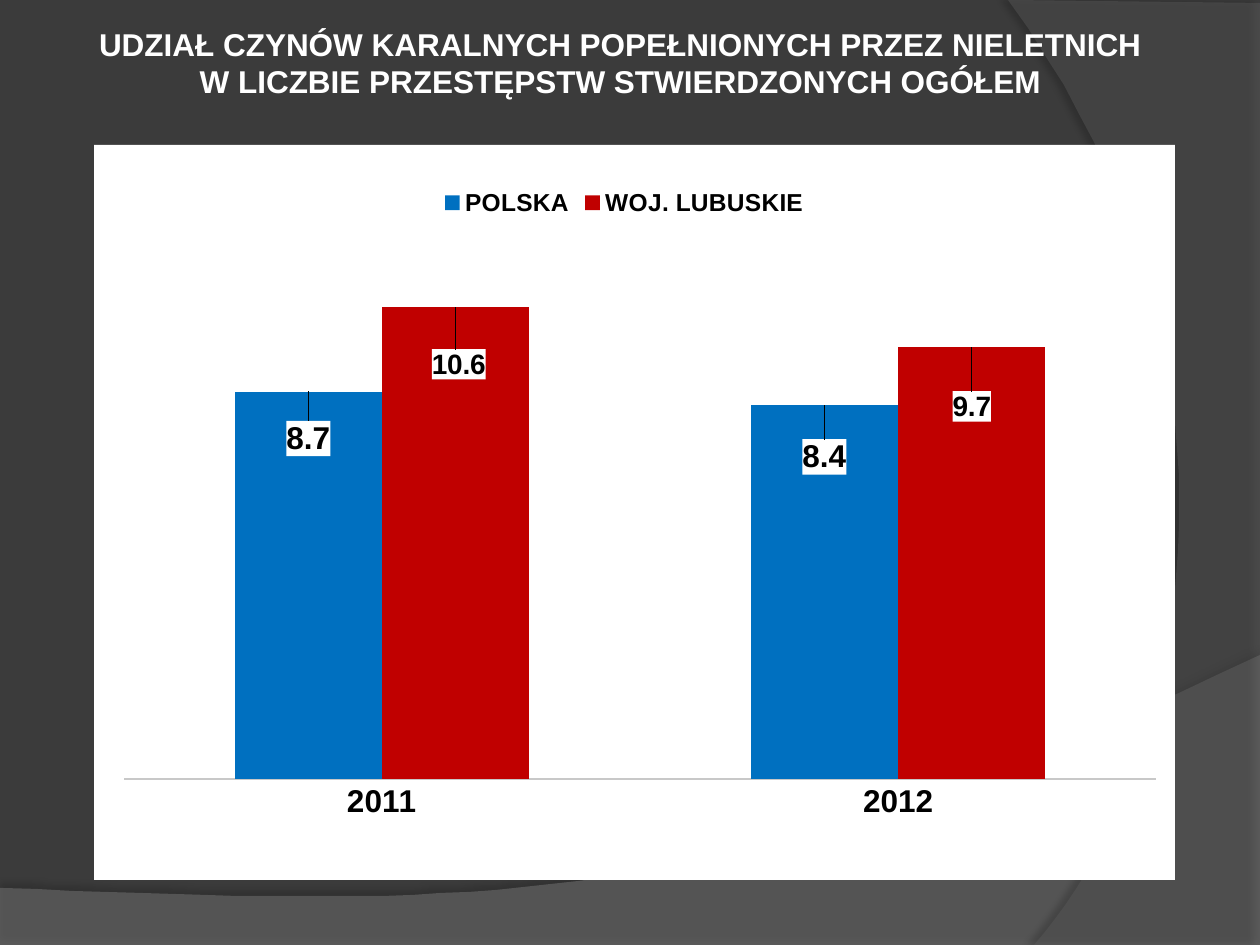
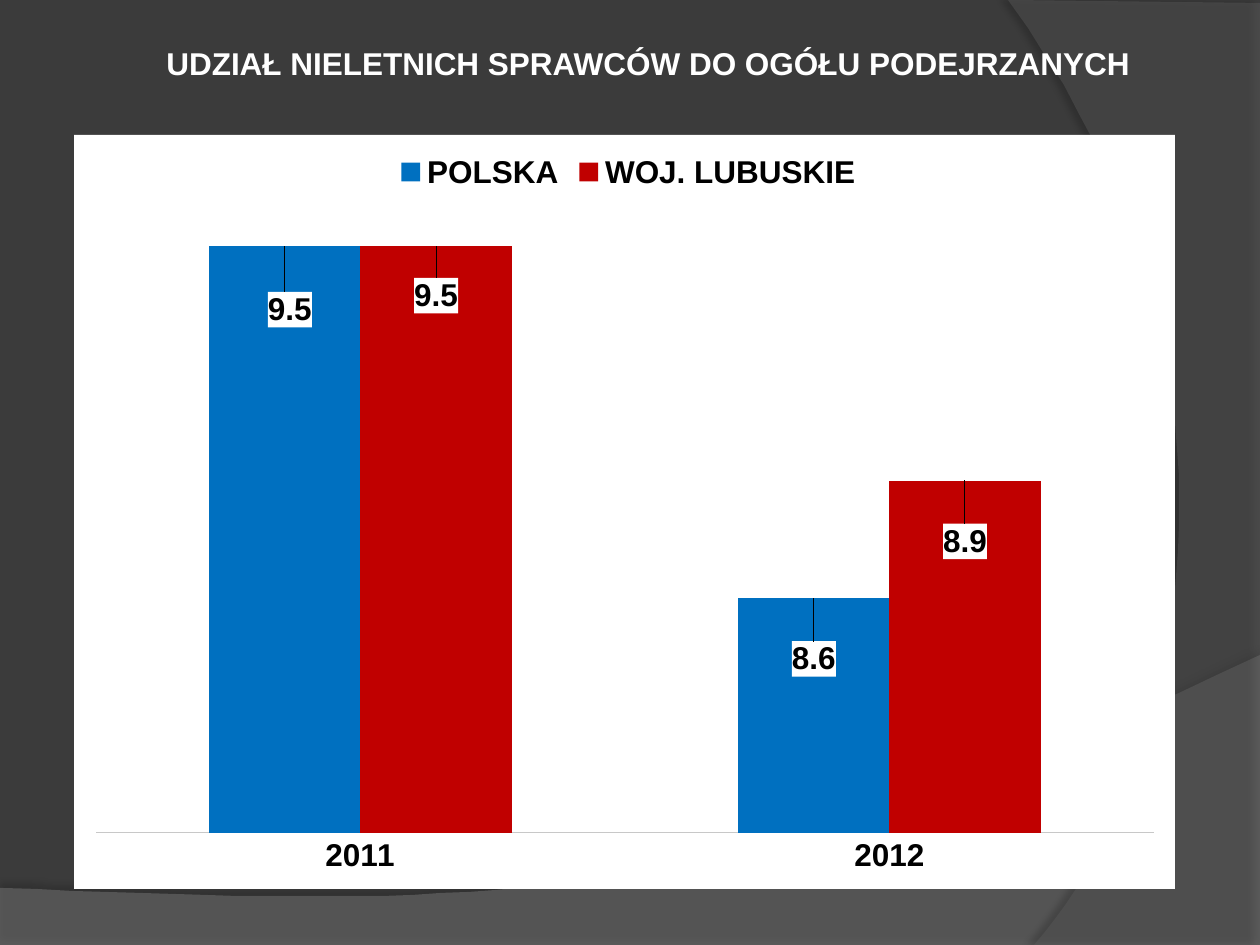
from dataclasses import dataclass
from typing import NamedTuple

from lxml import etree
from pptx import Presentation
from pptx.chart.data import CategoryChartData
from pptx.dml.color import RGBColor
from pptx.enum.chart import XL_CHART_TYPE, XL_LABEL_POSITION, XL_LEGEND_POSITION, XL_TICK_MARK
from pptx.enum.text import MSO_ANCHOR, MSO_AUTO_SIZE, PP_ALIGN
from pptx.oxml import parse_xml
from pptx.oxml.ns import nsdecls, qn
from pptx.util import Emu, Pt

COLUMN = XL_CHART_TYPE.COLUMN_CLUSTERED
INSIDE = XL_LABEL_POSITION.INSIDE_END
TOP = XL_LEGEND_POSITION.TOP
NO_TICK = XL_TICK_MARK.NONE
MIDDLE = MSO_ANCHOR.MIDDLE
CENTER = PP_ALIGN.CENTER
NO_FIT = MSO_AUTO_SIZE.NONE

SCALE = 914400 / 126
WIDE, HIGH = 1260, 945
FONT = "Arial"
COLORS = {
    "back": "3B3B3B", "wave": "7F7F7F", "curve": "5E5E5E", "white": "FFFFFF",
    "black": "000000", "axis": "C8C8C8", "poland": "0070C0", "region": "C00000",
}
YEARS = ("2011", "2012")
LABEL_GAP = 5

Point = tuple[float, float]


class Box(NamedTuple):
    left: int
    top: int
    width: int
    height: int


class Drop(NamedTuple):
    """Label centre, measured from the top centre of its column."""
    right: int
    down: int


@dataclass
class Series:
    name: str
    color: str
    values: tuple[float, float]
    size: int
    drops: tuple[Drop, Drop]


@dataclass
class Page:
    title: str
    head: Box
    frame: Box
    plot: Box
    legend: Point
    legend_size: int
    low: float
    high: float
    series: tuple[Series, Series]


@dataclass
class Band:
    """Background band: straight corners, then one curve back to the start."""
    color: str
    alpha: int
    corners: tuple[Point, ...]
    bend: tuple[Point, Point, Point]
    shade: int
    dist: float
    angle: int


BANDS = (
    Band("wave", 45, ((0, 888), (0, 946), (WIDE, 946), (WIDE, 655)),
         ((704, 919), (493, 906), (0, 888)), 35, 3.5, 270),
    Band("curve", 40, ((WIDE, 3), (WIDE, HIGH), (1034, HIGH)),
         ((1178, 780), (1283, 378), (1008, 0)), 45, 4, 180),
)

PAGES = (
    Page("UDZIAŁ CZYNÓW KARALNYCH POPEŁNIONYCH PRZEZ NIELETNICH\v"
         "W LICZBIE PRZESTĘPSTW STWIERDZONYCH OGÓŁEM",
         Box(54, 14, 1133, 97), Box(94, 145, 1081, 735), Box(124, 245, 1032, 534),
         (437, 184), 14, 0, 12,
         (Series("POLSKA", "poland", (8.7, 8.4), 18, (Drop(0, 47), Drop(0, 52))),
          Series("WOJ. LUBUSKIE", "region", (10.6, 9.7), 16, (Drop(3, 58), Drop(0, 60))))),
    Page("UDZIAŁ NIELETNICH SPRAWCÓW DO OGÓŁU PODEJRZANYCH",
         Box(134, 0, 1029, 125), Box(74, 135, 1101, 754), Box(96, 207, 1058, 626),
         (391, 148), 18, 8, 9.6,
         (Series("POLSKA", "poland", (9.5, 8.6), 18, (Drop(5, 64), Drop(0, 61))),
          Series("WOJ. LUBUSKIE", "region", (9.5, 8.9), 18, (Drop(0, 50), Drop(0, 61))))),
)


def px(value: float) -> Emu:
    return Emu(round(value * SCALE))


def rgb(name: str) -> RGBColor:
    return RGBColor.from_string(COLORS[name])


def style(font, size: int, color: str = "black", bold: bool = True) -> None:
    font.name, font.size, font.bold = FONT, Pt(size), bold
    font.color.rgb = rgb(color)


def trace(start: Point, bend: tuple[Point, Point, Point], steps: int = 40) -> list[Point]:
    """Points along a cubic curve."""
    nodes = (start, *bend)
    points = []
    for step in range(1, steps + 1):
        t = step / steps
        parts = ((1 - t) ** 3, 3 * t * (1 - t) ** 2, 3 * t * t * (1 - t), t ** 3)
        points.append(tuple(sum(p * n[axis] for p, n in zip(parts, nodes)) for axis in (0, 1)))
    return points


def add_band(slide, master, band: Band) -> None:
    """Build the outline on a slide, then hand it to the master."""
    start, *rest = band.corners
    path = slide.shapes.build_freeform(*start, scale=SCALE)
    path.add_line_segments(rest + trace(band.corners[-1], band.bend))
    shape = path.convert_to_shape()
    shape.fill.solid()
    shape.fill.fore_color.rgb = rgb(band.color)
    shape.line.fill.background()
    color = shape.element.spPr.find(qn("a:solidFill"))[0]
    etree.SubElement(color, qn("a:alpha"), val=str(band.alpha * 1000))
    shape.element.spPr.append(parse_xml(
        f'<a:effectLst {nsdecls("a")}><a:outerShdw blurRad="{Pt(4)}" dist="{Pt(band.dist)}" '
        f'dir="{band.angle * 60000}"><a:srgbClr val="{COLORS["black"]}">'
        f'<a:alpha val="{band.shade * 1000}"/></a:srgbClr></a:outerShdw></a:effectLst>'))
    master.shapes.element.append(shape.element)


def layout(inner: bool = False, edge: bool = False, **parts: float):
    """Manual chart layout; parts are fractions of the chart frame."""
    target = '<c:layoutTarget val="inner"/>' if inner else ""
    modes = '<c:xMode val="edge"/><c:yMode val="edge"/>' if edge else ""
    sizes = "".join(f'<c:{key} val="{value:.4f}"/>' for key, value in parts.items())
    return parse_xml(f'<c:layout {nsdecls("c")}><c:manualLayout>{target}{modes}{sizes}'
                     '</c:manualLayout></c:layout>')


def set_layout(parent, spot: int, new) -> None:
    for old in parent.findall(qn("c:layout")):
        parent.remove(old)
    parent.insert(spot, new)


def whiten(node) -> None:
    """Give a chart part with its own text style a white fill."""
    node.find(qn("c:txPr")).addprevious(parse_xml(
        f'<c:spPr {nsdecls("c", "a")}><a:solidFill><a:srgbClr val="{COLORS["white"]}"/>'
        '</a:solidFill><a:ln><a:noFill/></a:ln></c:spPr>'))


def add_title(slide, page: Page) -> None:
    title = slide.shapes.title
    title.left, title.top, title.width, title.height = map(px, page.head)
    frame = title.text_frame
    frame.text = page.title
    frame.word_wrap, frame.auto_size, frame.vertical_anchor = True, NO_FIT, MIDDLE
    frame.margin_left = frame.margin_right = px(6)
    frame.margin_top = frame.margin_bottom = px(6)
    line = frame.paragraphs[0]
    line.alignment = CENTER
    style(line.font, 18, "white")


def style_bars(bars, node, series: Series, frame: Box) -> None:
    """Colour one series and place its labels; node is its XML element."""
    bars.format.fill.solid()
    bars.format.fill.fore_color.rgb = rgb(series.color)
    bars.data_labels.show_value = True
    style(bars.data_labels.font, series.size)
    for index, drop in enumerate(series.drops):
        label = bars.points[index].data_label
        style(label.font, series.size)
        label.position = INSIDE
        mark = node.findall(".//" + qn("c:dLbl"))[index]
        whiten(mark)
        shift = drop.down - series.size - LABEL_GAP
        set_layout(mark, 1, layout(x=drop.right / frame.width, y=shift / frame.height))


def style_axes(chart, page: Page) -> None:
    years, values = chart.category_axis, chart.value_axis
    years.major_tick_mark = years.minor_tick_mark = NO_TICK
    years.format.line.color.rgb = rgb("axis")
    years.format.line.width = Pt(0.75)
    style(years.tick_labels.font, 18)
    values.minimum_scale, values.maximum_scale = page.low, page.high
    values.has_major_gridlines = False
    values.visible = False


def add_chart(slide, page: Page) -> None:
    data = CategoryChartData()
    data.categories = YEARS
    for series in page.series:
        data.add_series(series.name, series.values)
    frame, plot = page.frame, page.plot
    chart = slide.shapes.add_chart(COLUMN, *map(px, frame), data).chart
    root = chart.element
    chart.has_title = False
    style(chart.font, 10, "white", False)
    whiten(root)
    style_axes(chart, page)

    columns = chart.plots[0]
    columns.gap_width, columns.overlap, columns.vary_by_categories = 150, 0, False
    nodes = root.findall(".//" + qn("c:ser"))
    for bars, node, series in zip(columns.series, nodes, page.series):
        style_bars(bars, node, series, frame)

    chart.has_legend = True
    legend = chart.legend
    legend.position, legend.include_in_layout = TOP, False
    style(legend.font, page.legend_size)

    set_layout(root.find(".//" + qn("c:plotArea")), 0, layout(
        True, True, x=(plot.left - frame.left) / frame.width,
        y=(plot.top - frame.top) / frame.height,
        w=plot.width / frame.width, h=plot.height / frame.height))
    left, top = page.legend
    set_layout(root.find(".//" + qn("c:legend")), 1, layout(
        False, True, x=(left - frame.left) / frame.width, y=(top - frame.top) / frame.height))


def main() -> None:
    deck = Presentation()
    deck.slide_width, deck.slide_height = px(WIDE), px(HIGH)
    master = deck.slide_master
    master.background.fill.solid()
    master.background.fill.fore_color.rgb = rgb("back")
    slides = [deck.slides.add_slide(deck.slide_layouts[5]) for _ in PAGES]
    for band in BANDS:
        add_band(slides[0], master, band)
    for slide, page in zip(slides, PAGES):
        add_title(slide, page)
        add_chart(slide, page)
    deck.save("out.pptx")


if __name__ == "__main__":
    main()
